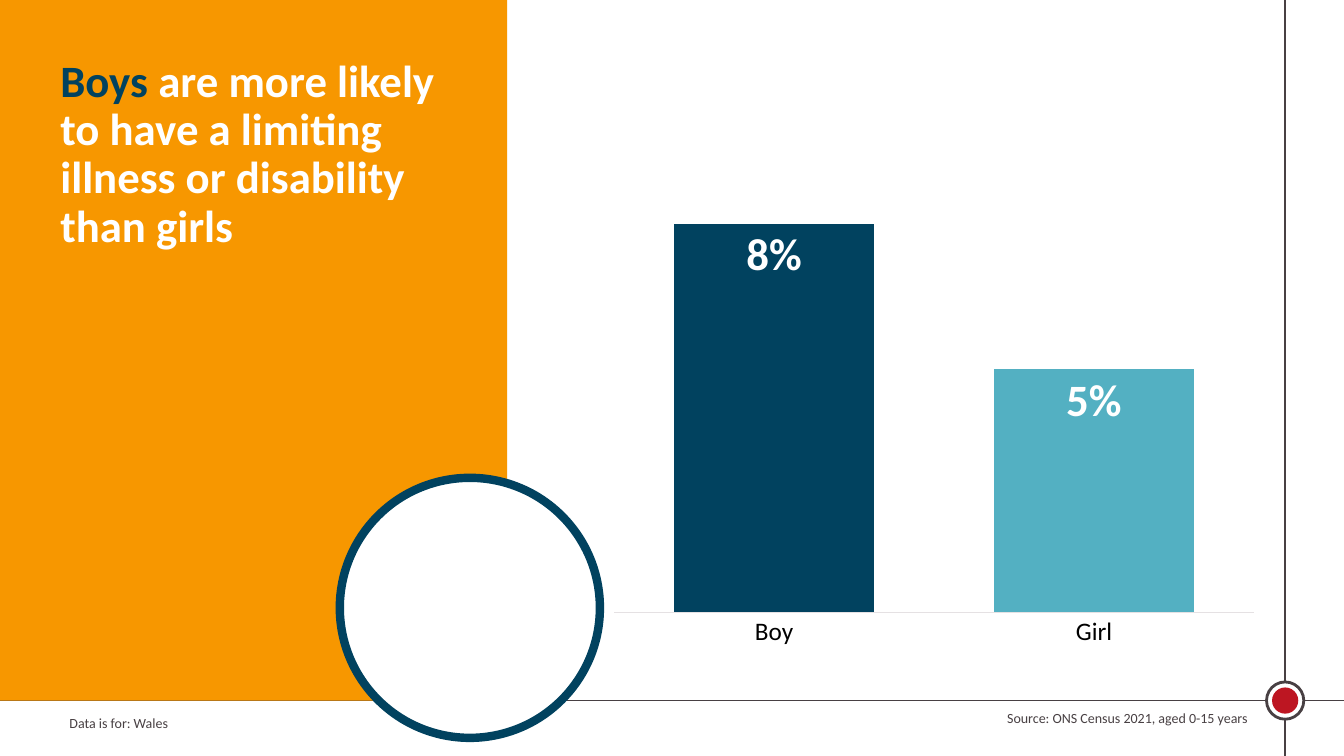
from dataclasses import dataclass

from lxml.etree import SubElement
from pptx import Presentation
from pptx.chart.data import CategoryChartData
from pptx.dml.color import RGBColor
from pptx.enum.chart import XL_CHART_TYPE as ChartType
from pptx.enum.chart import XL_LABEL_POSITION as LabelPosition
from pptx.enum.chart import XL_TICK_MARK as TickMark
from pptx.enum.shapes import MSO_CONNECTOR as Connector
from pptx.enum.shapes import MSO_SHAPE as Shape
from pptx.enum.text import MSO_AUTO_SIZE as AutoSize
from pptx.enum.text import PP_ALIGN as Align
from pptx.oxml import parse_xml
from pptx.oxml.ns import nsdecls, qn
from pptx.util import Inches, Pt


@dataclass(frozen=True)
class Theme:
    font: str = "Calibri"
    orange: str = "F79700"
    navy: str = "01425F"
    teal: str = "53B0C2"
    red: str = "BD1622"
    grey: str = "484043"
    pale: str = "E5E1E3"
    white: str = "FFFFFF"
    black: str = "000000"
    title_size: int = 32
    axis_size: int = 18
    chart_size: int = 16
    note_size: int = 10


class SlideBuilder:
    """Places elements by percentages of the slide's width and height."""

    def __init__(self, presentation, theme):
        self.theme = theme
        self.width = presentation.slide_width
        self.height = presentation.slide_height
        self.slide = presentation.slides.add_slide(presentation.slide_layouts[6])
        self.shapes = self.slide.shapes

    def across(self, share):
        return round(self.width * share / 100)

    def down(self, share):
        return round(self.height * share / 100)

    def box(self, left, top, width, height):
        return self.across(left), self.down(top), self.across(width), self.down(height)

    def style_font(self, font, size, color, bold=False):
        formats = {"name": self.theme.font, "size": Pt(size), "bold": bold}
        for name, value in formats.items():
            setattr(font, name, value)
        font.color.rgb = RGBColor.from_string(color)

    def style_line(self, line, color, weight):
        line.color.rgb = RGBColor.from_string(color)
        line.width = Pt(weight)

    def shape(self, kind, bounds, fill, line=None):
        shape = self.shapes.add_shape(kind, *bounds)
        shape.shadow.inherit = False
        shape.fill.solid()
        shape.fill.fore_color.rgb = RGBColor.from_string(fill)
        if line:
            self.style_line(shape.line, *line)
        else:
            shape.line.fill.background()

    def panel(self, left, top, width, height, fill):
        self.shape(Shape.RECTANGLE, self.box(left, top, width, height), fill)

    def circle(self, center, diameter, fill, line=None):
        """The diameter is a share of the slide's height."""
        size = self.down(diameter)
        left = self.across(center[0]) - size // 2
        top = self.down(center[1]) - size // 2
        self.shape(Shape.OVAL, (left, top, size, size), fill, line)

    def rule(self, start, end):
        connector = self.shapes.add_connector(
            Connector.STRAIGHT, self.across(start[0]), self.down(start[1]),
            self.across(end[0]), self.down(end[1]))
        self.style_line(connector.line, self.theme.grey, 1)
        SubElement(connector.line._get_or_add_ln().getparent(), qn("a:effectLst"))

    def text(self, bounds, runs, size, bold=False, **formats):
        frame = self.shapes.add_textbox(*self.box(*bounds)).text_frame
        frame.word_wrap = True
        frame.auto_size = AutoSize.SHAPE_TO_FIT_TEXT
        paragraph = frame.paragraphs[0]
        for name, value in formats.items():
            setattr(paragraph, name, value)
        for wording, color in runs:
            run = paragraph.add_run()
            run.text = wording
            self.style_font(run.font, size, color, bold)

    def column_chart(self, bounds, columns, plot_area):
        theme = self.theme
        data = CategoryChartData(number_format="0%")
        data.categories = [name for name, _, _ in columns]
        data.add_series("Series 1", [value for _, value, _ in columns])
        chart = self.shapes.add_chart(
            ChartType.COLUMN_CLUSTERED, *self.box(*bounds), data).chart
        chart.has_legend = chart.has_title = False
        self.style_font(chart.font, theme.chart_size, theme.grey)

        # Axes
        category_axis, value_axis = chart.category_axis, chart.value_axis
        category_axis.major_tick_mark = TickMark.NONE
        self.style_font(category_axis.tick_labels.font, theme.axis_size, theme.black)
        self.style_line(category_axis.format.line, theme.pale, 0.75)
        value_formats = {
            "visible": False, "has_major_gridlines": False,
            "minimum_scale": 0, "maximum_scale": max(value for _, value, _ in columns),
        }
        for name, value in value_formats.items():
            setattr(value_axis, name, value)

        # Columns and their labels
        plot = chart.plots[0]
        plot.gap_width = 60
        plot.vary_by_categories = False
        series = plot.series[0]
        for index, (_, _, color) in enumerate(columns):
            fill = series.points[index].format.fill
            fill.solid()
            fill.fore_color.rgb = RGBColor.from_string(color)
        labels = series.data_labels
        label_formats = {
            "show_value": True, "position": LabelPosition.INSIDE_END,
            "number_format": "0%", "number_format_is_linked": False,
        }
        for name, value in label_formats.items():
            setattr(labels, name, value)
        self.style_font(labels.font, theme.title_size, theme.white, bold=True)

        # Inner plot area, as shares of the chart
        settings = {"layoutTarget": "inner", "xMode": "edge", "yMode": "edge", **plot_area}
        entries = "".join(f'<c:{name} val="{value}"/>' for name, value in settings.items())
        area = chart.element.find(".//" + qn("c:plotArea"))
        for layout in area.findall(qn("c:layout")):
            area.remove(layout)
        area.insert(0, parse_xml(
            f'<c:layout {nsdecls("c")}><c:manualLayout>{entries}</c:manualLayout></c:layout>'))


def main():
    presentation = Presentation()
    presentation.slide_width = Inches(13.33)
    presentation.slide_height = Inches(7.5)
    theme = Theme()
    builder = SlideBuilder(presentation, theme)

    # Frame lines with the marker where they cross
    margin, footer = 95.62, 92.67
    builder.text((4.43, 93.87, 32.93, 3.6), [("Data is for: Wales", theme.grey)],
                 theme.note_size)
    builder.rule((margin, 0), (margin, 100))
    builder.rule((0, footer), (100, footer))
    builder.circle((margin, footer), 4.93, theme.white, (theme.grey, 2))
    builder.circle((margin, footer), 3.47, theme.red)

    # Headline panel and ring
    builder.panel(0, 0, 37.73, footer, theme.orange)
    builder.circle((34.96, 80.4), 34.4, theme.white, (theme.navy, 6))
    builder.text((71.42, 93.2, 22.13, 3.6),
                 [("Source: ONS Census 2021, aged 0-15 years", theme.grey)],
                 theme.note_size, alignment=Align.RIGHT)
    headline = [
        ("Boys", theme.navy),
        (" are more likely to have a limiting illness or disability than girls",
         theme.white),
    ]
    builder.text((3.75, 7.07, 31.66, 33.6), headline, theme.title_size,
                 bold=True, line_spacing=0.9)

    # Share of boys and girls
    columns = [("Boy", 0.08, theme.navy), ("Girl", 0.05, theme.teal)]
    builder.column_chart((44.71, 24.67, 49.59, 61.87), columns,
                         {"x": 0.02, "y": 0.08, "w": 0.96, "h": 0.83})

    presentation.save("out.pptx")


if __name__ == "__main__":
    main()
